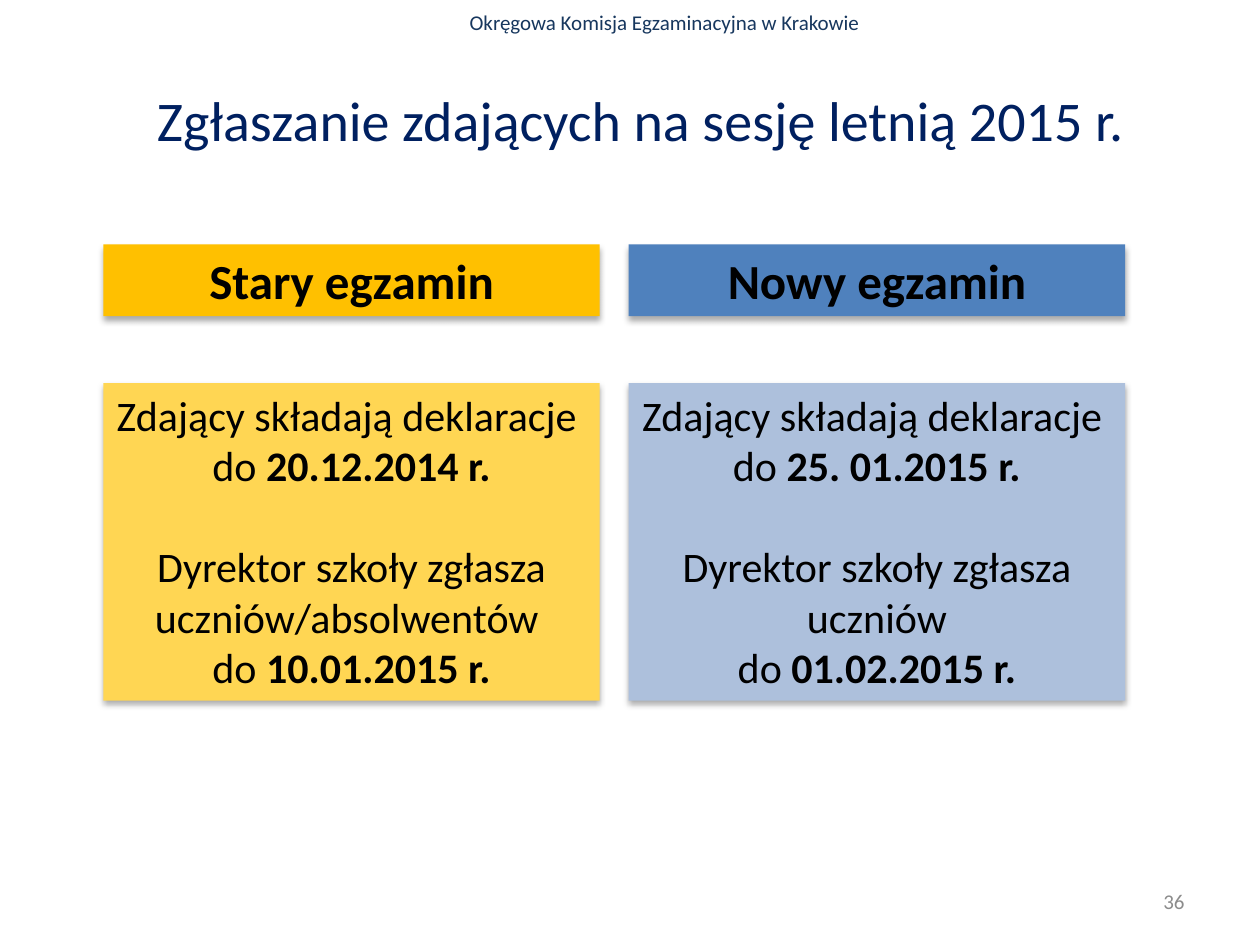
import lxml.etree
import pptx
import pptx.dml.color
import pptx.enum.shapes
import pptx.enum.text
import pptx.oxml
import pptx.oxml.ns
import pptx.util

Inches = pptx.util.Inches
Pt = pptx.util.Pt
ALIGN = pptx.enum.text.PP_ALIGN
ANCHOR = pptx.enum.text.MSO_ANCHOR

COLUMNS = [
    {"heading": "Stary egzamin", "strong": "FFC000", "pale": "FFD653",
     "steps": [(["Zdający składają deklaracje ", "do "], "20.12.2014 r."),
               (["Dyrektor szkoły zgłasza uczniów/absolwentów ", "do "],
                "10.01.2015 r.")]},
    {"heading": "Nowy egzamin", "strong": "4F81BD", "pale": "ADC0DC",
     "steps": [(["Zdający składają deklaracje ", "do "], "25. 01.2015 r."),
               (["Dyrektor szkoły zgłasza uczniów", "do "],
                "01.02.2015 r.")]},
]


def color(value):
    return pptx.dml.color.RGBColor.from_string(value)


def format_font(font, value, **formats):
    for name, setting in {"name": "Calibri", **formats}.items():
        setattr(font, name, setting)
    font.color.rgb = color(value)


def add_run(paragraph, text, value, **formats):
    run = paragraph.add_run()
    run.text = text
    format_font(run.font, value, **formats)


def add_label(slide, box, text, size, value, align, anchor=ANCHOR.TOP):
    frame = slide.shapes.add_textbox(*map(Inches, box)).text_frame
    frame.word_wrap = True
    frame.vertical_anchor = anchor
    paragraph = frame.paragraphs[0]
    paragraph.alignment = align
    add_run(paragraph, text, value, size=Pt(size))


def add_title(slide, box, text):
    title = slide.shapes.title
    title.left, title.top, title.width, title.height = map(Inches, box)
    title.text_frame.vertical_anchor = ANCHOR.MIDDLE
    paragraph = title.text_frame.paragraphs[0]
    paragraph.alignment = ALIGN.CENTER
    add_run(paragraph, text, "002060", size=Pt(32))


def add_soft_shadow(shape):
    shape.shadow.inherit = False
    effects = shape._element.spPr.find(pptx.oxml.ns.qn("a:effectLst"))
    effects.append(pptx.oxml.parse_xml(
        f'<a:outerShdw {pptx.oxml.ns.nsdecls("a")} blurRad="{Pt(3.5)}" '
        f'dist="{Pt(2.2)}" dir="5400000" rotWithShape="0">'
        '<a:srgbClr val="000000"><a:alpha val="32000"/></a:srgbClr>'
        '</a:outerShdw>'))


def add_panel(slide, box, fill):
    """Add a filled rectangle with a shadow and return its text frame."""
    panel = slide.shapes.add_shape(
        pptx.enum.shapes.MSO_SHAPE.RECTANGLE, *map(Inches, box))
    panel.fill.solid()
    panel.fill.fore_color.rgb = color(fill)
    panel.line.fill.background()
    add_soft_shadow(panel)
    panel.text_frame.word_wrap = True
    panel.text_frame.vertical_anchor = ANCHOR.TOP
    return panel.text_frame


def add_column(slide, box, column):
    left, top, width, height = box
    heading_height, body_offset = 0.57, 1.1

    frame = add_panel(slide, (left, top, width, heading_height),
                      column["strong"])
    paragraph = frame.paragraphs[0]
    paragraph.alignment = ALIGN.CENTER
    add_run(paragraph, column["heading"], "000000", size=Pt(28), bold=True)

    frame = add_panel(
        slide, (left, top + body_offset, width, height - body_offset),
        column["pale"])
    for index, (lines, deadline) in enumerate(column["steps"]):
        if index:
            paragraph = frame.add_paragraph()
            paragraph.space_before = Pt(29)
        else:
            paragraph = frame.paragraphs[0]
        paragraph.alignment = ALIGN.CENTER
        for number, line in enumerate(lines):
            if number:
                paragraph.add_line_break()
            add_run(paragraph, line, "000000", size=Pt(24), bold=False)
        add_run(paragraph, deadline, "000000", size=Pt(24), bold=True)
        for line_break in paragraph._p.findall(pptx.oxml.ns.qn("a:br")):
            lxml.etree.SubElement(
                line_break, pptx.oxml.ns.qn("a:rPr"), sz="2400")


def main():
    presentation = pptx.Presentation()
    presentation.slide_width = Inches(10)
    presentation.slide_height = Inches(7.5)
    slide = presentation.slides.add_slide(presentation.slide_layouts[5])

    add_label(slide, (1.14, 0.03, 8.27, 0.3),
              "Okręgowa Komisja Egzaminacyjna w Krakowie", 12, "17375E",
              ALIGN.CENTER)
    add_title(slide, (0.67, 0.42, 8.83, 1.05),
              "Zgłaszanie zdających na sesję letnią 2015 r.")
    left, width, gap = 0.82, 3.94, 0.23
    for index, column in enumerate(COLUMNS):
        add_column(slide, (left + index * (width + gap), 1.94, width, 3.62),
                   column)
    add_label(slide, (7.17, 6.95, 2.33, 0.4), "36", 12, "8C8C8C",
              ALIGN.RIGHT, ANCHOR.MIDDLE)
    presentation.save("out.pptx")


if __name__ == "__main__":
    main()
